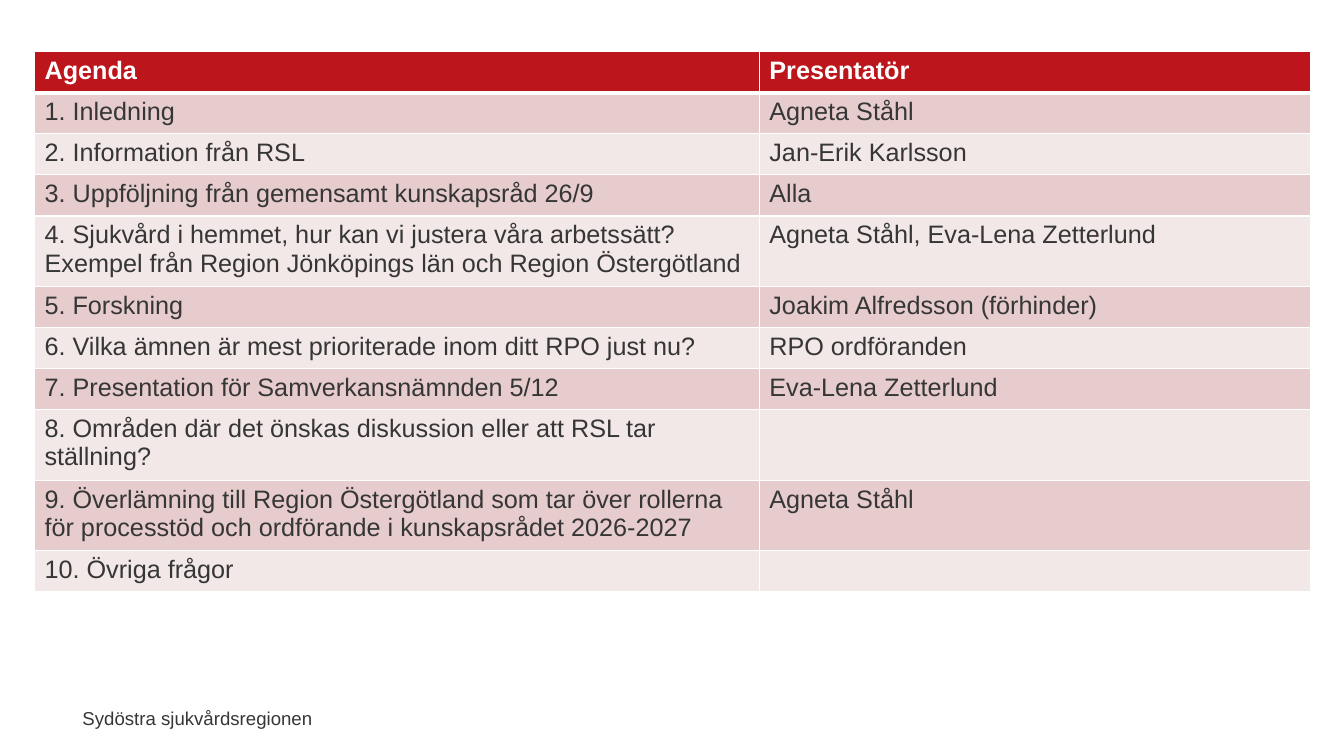
from dataclasses import dataclass

from lxml import etree
from pptx import Presentation
from pptx import util as u
from pptx.dml import color
from pptx.enum import text
from pptx.oxml import ns


@dataclass(frozen=True)
class Theme:
    font: str = "Arial"
    table_size: float = 18
    footer_size: float = 13.3
    ink: str = "363636"
    white: str = "FFFFFF"
    header: str = "BC151C"
    bands: tuple = ("E7CCCD", "F3E8E8")
    rule: float = 1
    header_rule: float = 3


AGENDA = [
    ("Agenda", "Presentatör"),
    ("1. Inledning", "Agneta Ståhl"),
    ("2. Information från RSL", "Jan-Erik Karlsson"),
    ("3. Uppföljning från gemensamt kunskapsråd 26/9", "Alla"),
    ("4. Sjukvård i hemmet, hur kan vi justera våra arbetssätt? "
     "Exempel från Region Jönköpings län och Region Östergötland",
     "Agneta Ståhl, Eva-Lena Zetterlund"),
    ("5. Forskning", "Joakim Alfredsson (förhinder)"),
    ("6. Vilka ämnen är mest prioriterade inom ditt RPO just nu?", "RPO ordföranden"),
    ("7. Presentation för Samverkansnämnden 5/12", "Eva-Lena Zetterlund"),
    ("8. Områden där det önskas diskussion eller att RSL tar ställning?", ""),
    ("9. Överlämning till Region Östergötland som tar över rollerna "
     "för processtöd och ordförande i kunskapsrådet 2026-2027", "Agneta Ståhl"),
    ("10. Övriga frågor", ""),
]
TWO_LINE_ITEMS = {4, 8, 9}
ONE_LINE, TWO_LINES = 5.43, 9.26


def write(frame, words, *, font, size, ink, bold=False, align=text.PP_ALIGN.LEFT):
    paragraph = frame.paragraphs[0]
    paragraph.alignment = align
    if not words:
        paragraph.font.size = u.Pt(size)
        return
    run = paragraph.add_run()
    run.text = words
    run.font.name = font
    run.font.size = u.Pt(size)
    run.font.bold = bold
    run.font.color.rgb = color.RGBColor.from_string(ink)


def add_border(cell, side, ink, width):
    properties = cell._tc.get_or_add_tcPr()
    line = etree.SubElement(properties, ns.qn(f"a:ln{side}"), w=str(u.Pt(width)))
    fill = etree.SubElement(line, ns.qn("a:solidFill"))
    etree.SubElement(fill, ns.qn("a:srgbClr"), val=ink)


class AgendaSlide:
    def __init__(self, deck, theme):
        self.theme = theme
        self.width, self.height = deck.slide_width, deck.slide_height
        self.slide = deck.slides.add_slide(deck.slide_layouts[6])

    def across(self, percent):
        return u.Emu(round(self.width * percent / 100))

    def down(self, percent):
        return u.Emu(round(self.height * percent / 100))

    def table(self, left, top, columns, rows, content):
        table = self.slide.shapes.add_table(
            len(rows), len(columns), self.across(left), self.down(top),
            self.across(sum(columns)), self.down(sum(rows))).table
        table.horz_banding = False
        for column, share in zip(table.columns, columns):
            column.width = self.across(share)
        for row, share in zip(table.rows, rows):
            row.height = self.down(share)
        for row, entries in enumerate(content):
            for column, words in enumerate(entries):
                self.cell(table.cell(row, column), row, words)

    def cell(self, cell, row, words):
        theme = self.theme
        heading = row == 0
        for side in "LRTB":
            thick = (row, side) in {(0, "B"), (1, "T")}
            add_border(cell, side, theme.white, theme.header_rule if thick else theme.rule)
        cell.fill.solid()
        shade = theme.header if heading else theme.bands[(row - 1) % 2]
        cell.fill.fore_color.rgb = color.RGBColor.from_string(shade)
        write(cell.text_frame, words, font=theme.font, size=theme.table_size,
              ink=theme.white if heading else theme.ink, bold=heading)

    def footer(self, left, top, width, height, words):
        frame = self.slide.shapes.add_textbox(
            self.across(left), self.down(top), self.across(width), self.down(height)).text_frame
        frame.word_wrap = False
        frame.auto_size = text.MSO_AUTO_SIZE.SHAPE_TO_FIT_TEXT
        write(frame, words, font=self.theme.font, size=self.theme.footer_size,
              ink=self.theme.ink, align=text.PP_ALIGN.RIGHT)


def main():
    deck = Presentation()
    deck.slide_width, deck.slide_height = u.Inches(13.33), u.Inches(7.5)
    page = AgendaSlide(deck, Theme())
    page.footer(5.25, 92.8, 18.75, 4.4, "Sydöstra sjukvårdsregionen")
    heights = [TWO_LINES if item in TWO_LINE_ITEMS else ONE_LINE for item in range(len(AGENDA))]
    page.table(2.57, 6.85, (53.93, 41.03), heights, AGENDA)
    deck.save("out.pptx")


if __name__ == "__main__":
    main()
